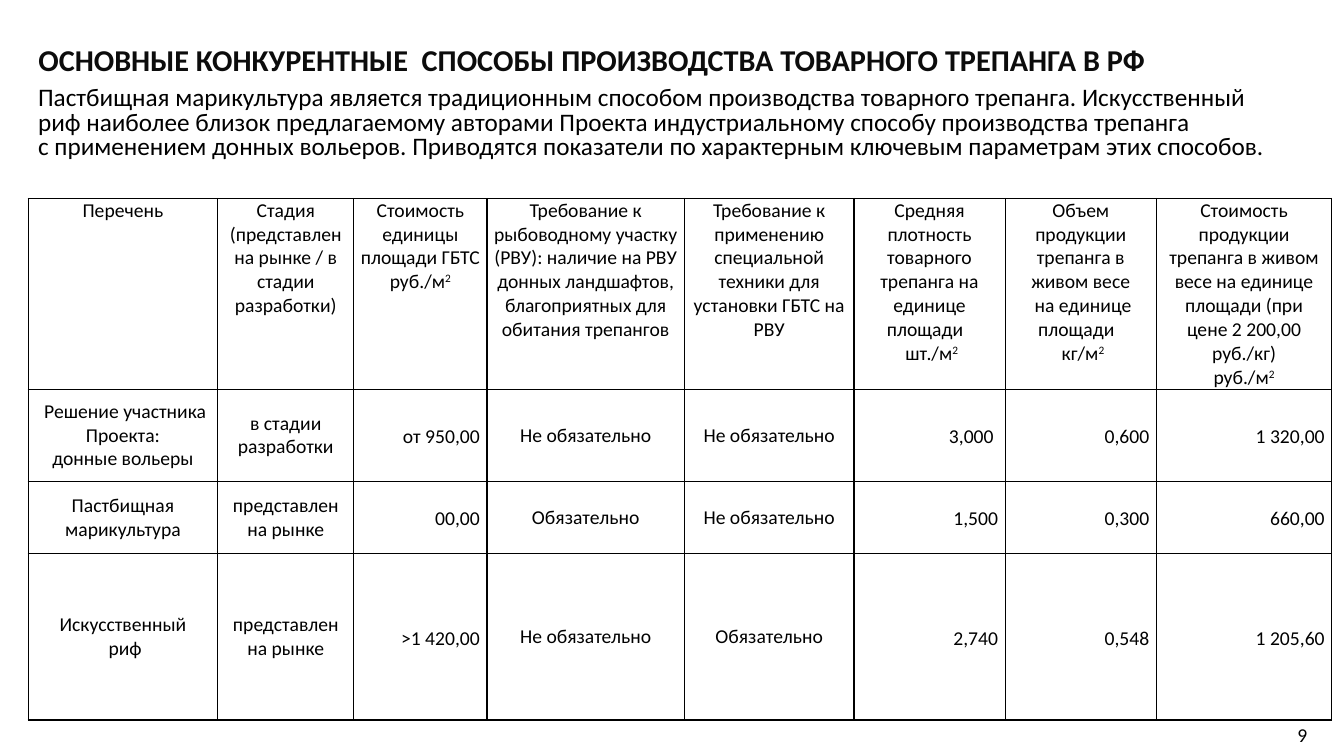
from lxml import etree
from pptx import Presentation
from pptx.dml.color import RGBColor
from pptx.enum.text import MSO_ANCHOR, PP_ALIGN
from pptx.oxml.ns import qn
from pptx.util import Inches, Pt

LEFT, CENTER, RIGHT = PP_ALIGN.LEFT, PP_ALIGN.CENTER, PP_ALIGN.RIGHT
TOP, MIDDLE = MSO_ANCHOR.TOP, MSO_ANCHOR.MIDDLE
COLORS = {"title": "0C0C0C", "text": "000000", "border": "000000"}
FONT = "Calibri"
MARGIN = 0.28
CONTENT_WIDTH = 12.93

COLUMN_WIDTHS = [1.88, 1.35, 1.32, 1.96, 1.68, 1.5, 1.5, 1.74]
ROW_HEIGHTS = [1.78, 0.91, 0.72, 1.65]
NUMBER_COLUMNS = {2, 5, 6, 7}

# A line break starts a paragraph; a caret starts a superscript
ROWS = [
    ["Перечень",
     "Стадия (представлен на рынке / в стадии разработки)",
     "Стоимость единицы площади ГБТС\nруб./м^2",
     "Требование к рыбоводному участку (РВУ): наличие на РВУ донных ландшафтов, "
     "благоприятных для обитания трепангов",
     "Требование к применению специальной техники для установки ГБТС на РВУ",
     "Средняя плотность товарного трепанга на единице площади  \n шт./м^2",
     "Объем продукции трепанга в живом весе\n на единице площади  \n кг/м^2",
     "Стоимость продукции трепанга в живом весе на единице площади "
     "(при цене 2 200,00 руб./кг)\nруб./м^2"],
    [" Решение участника Проекта:\nдонные вольеры", "в стадии разработки", "от 950,00",
     "Не обязательно", "Не обязательно", "3,000 ", "0,600", "1 320,00"],
    ["Пастбищная марикультура", "представлен на рынке", "00,00",
     "Обязательно", "Не обязательно", "1,500", "0,300", "660,00"],
    ["Искусственный\n риф", "представлен на рынке", ">1 420,00",
     "Не обязательно", "Обязательно", "2,740", "0,548", "1 205,60"],
]
INTRO = (
    "Пастбищная марикультура является традиционным способом производства товарного трепанга. "
    "Искусственный\n"
    "риф наиболее близок предлагаемому авторами Проекта индустриальному способу производства "
    "трепанга\n"
    "с применением донных вольеров. Приводятся показатели по характерным ключевым параметрам "
    "этих способов."
)


def write_text(frame, text, size, align=LEFT, spacing=1.0, color="text", bold=False):
    for index, line in enumerate(text.split("\n")):
        para = frame.add_paragraph() if index else frame.paragraphs[0]
        para.alignment = align
        para.line_spacing = spacing
        para.space_before = para.space_after = Pt(0)
        base, _, superscript = line.partition("^")
        for part in filter(None, (base, superscript)):
            span = para.add_run()
            span.text = part
            look = {"name": FONT, "size": Pt(size), "bold": bold}
            for name, value in look.items():
                setattr(span.font, name, value)
            span.font.color.rgb = RGBColor.from_string(COLORS[color])
        if superscript:
            span.font._element.set("baseline", "30000")


def add_borders(cell):
    properties = cell._tc.get_or_add_tcPr()
    for index, side in enumerate(("lnL", "lnR", "lnT", "lnB")):
        line = etree.Element(qn(f"a:{side}"), w=str(Pt(1)))
        fill = etree.SubElement(line, qn("a:solidFill"))
        etree.SubElement(fill, qn("a:srgbClr"), val=COLORS["border"])
        properties.insert(index, line)


# Deck and page
deck = Presentation()
deck.slide_width, deck.slide_height = Inches(13.33), Inches(7.5)
page = deck.slides.add_slide(deck.slide_layouts[5])

# Title
title = page.shapes.title
title.left, title.top = Inches(MARGIN), Inches(0.4)
title.width, title.height = Inches(11.5), Inches(0.42)
title.text_frame.vertical_anchor = MIDDLE
title.text_frame.word_wrap = True
write_text(title.text_frame, "ОСНОВНЫЕ КОНКУРЕНТНЫЕ  СПОСОБЫ ПРОИЗВОДСТВА ТОВАРНОГО ТРЕПАНГА В РФ",
           21.6, spacing=0.9, color="title", bold=True)

# Comparison table
table = page.shapes.add_table(
    len(ROWS), len(COLUMN_WIDTHS), Inches(MARGIN), Inches(1.97),
    Inches(CONTENT_WIDTH), Inches(sum(ROW_HEIGHTS))).table
table.first_row = table.horz_banding = False
for column, width in zip(table.columns, COLUMN_WIDTHS):
    column.width = Inches(width)
for row, height in zip(table.rows, ROW_HEIGHTS):
    row.height = Inches(height)

for row_index, texts in enumerate(ROWS):
    for column_index, text in enumerate(texts):
        cell = table.cell(row_index, column_index)
        cell.fill.background()
        cell.margin_left = cell.margin_right = Inches(0.07)
        cell.margin_top = cell.margin_bottom = 0
        cell.vertical_anchor = MIDDLE if row_index else TOP
        is_number = row_index > 0 and column_index in NUMBER_COLUMNS
        write_text(cell.text_frame, text, 14, RIGHT if is_number else CENTER,
                   1.15 if is_number else 1.0)
        add_borders(cell)

# Introduction and page number
for text, size, spacing, wrap, place in (
    (INTRO, 18, 0.8, True, (MARGIN, 0.82, CONTENT_WIDTH, 0.83)),
    ("9", 14, 1.0, False, (12.77, 7.12, 0.3, 0.34)),
):
    box = page.shapes.add_textbox(*map(Inches, place))
    box.text_frame.word_wrap = wrap
    write_text(box.text_frame, text, size, spacing=spacing)

deck.save("out.pptx")
